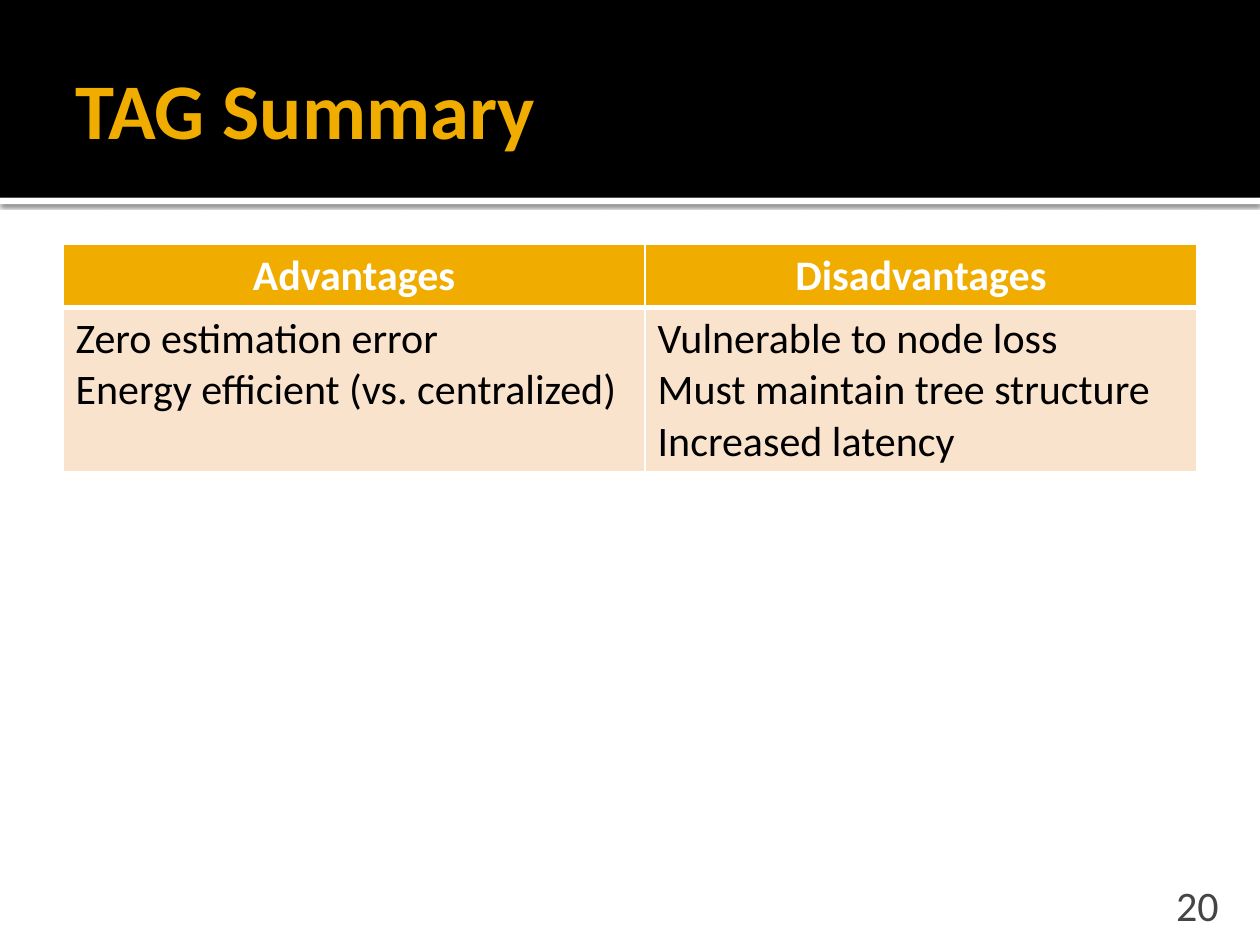
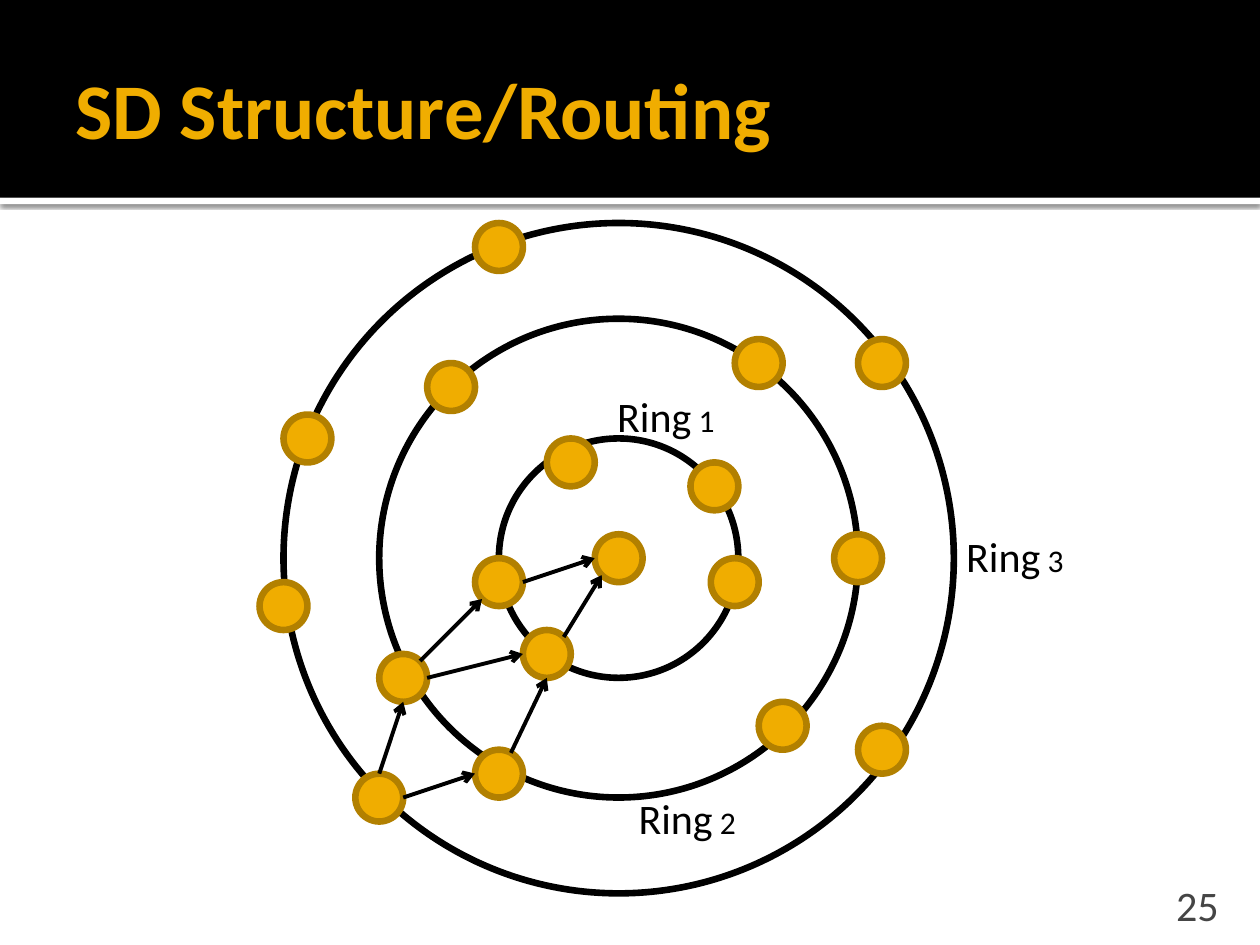
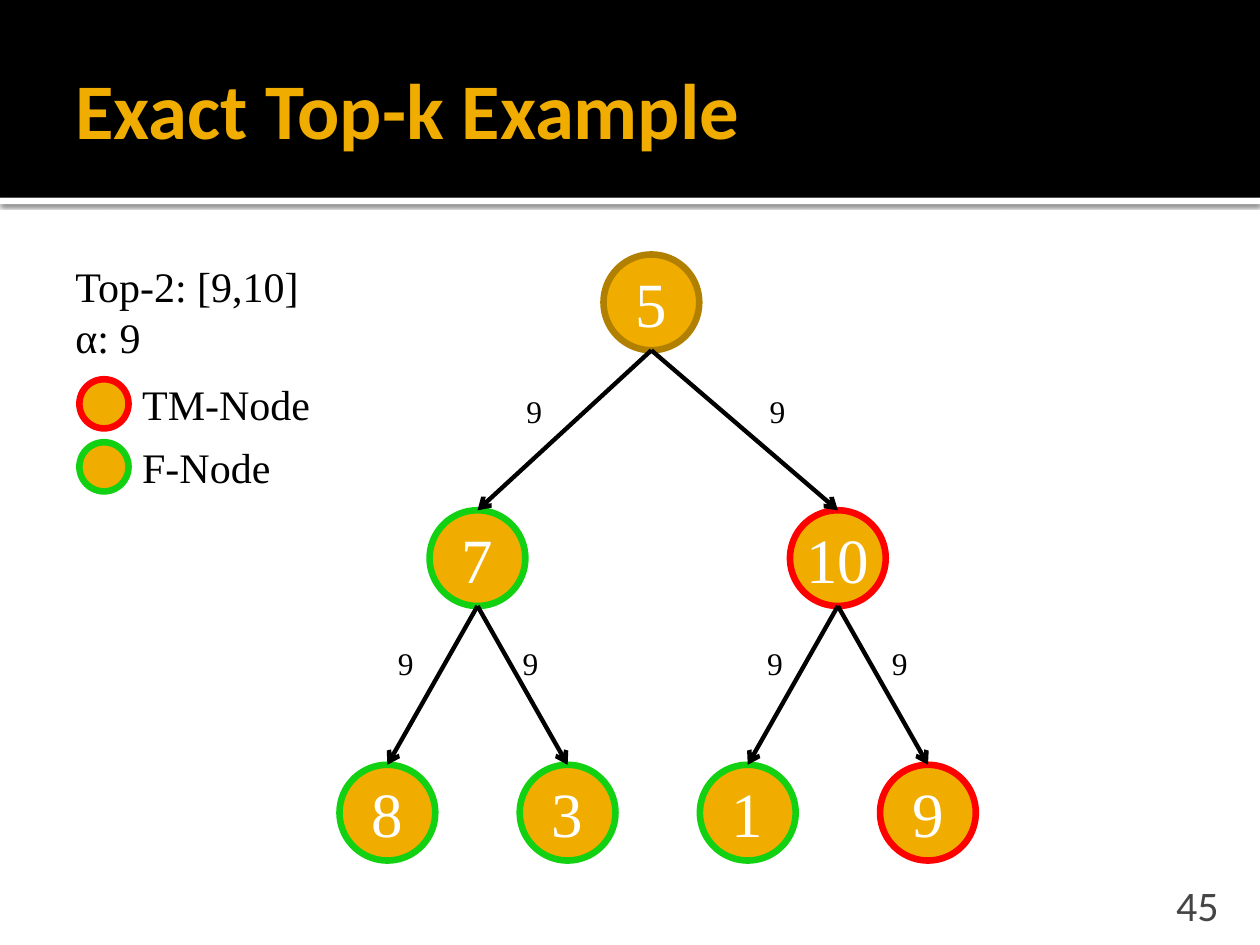
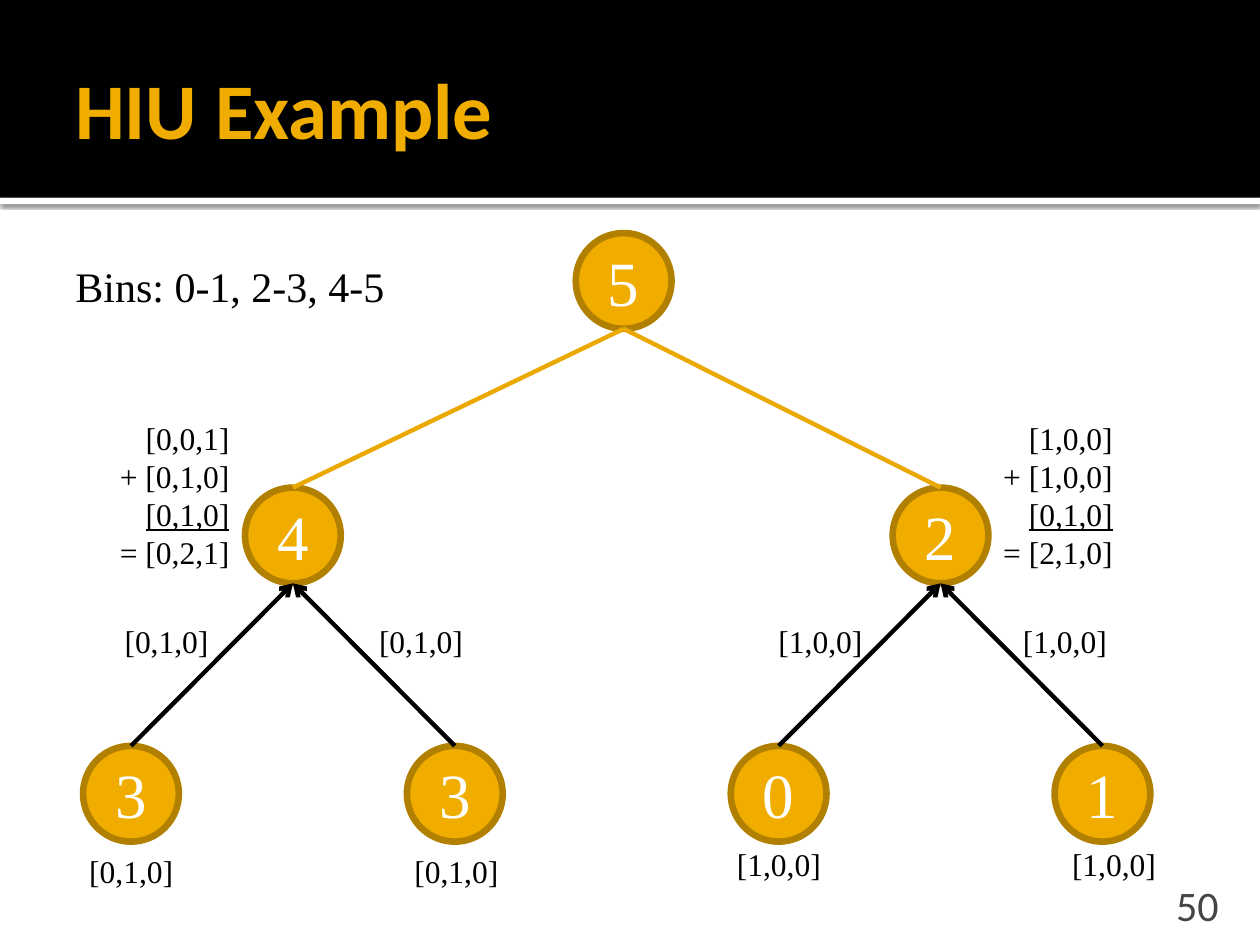
import math

import lxml.etree
import pptx
import pptx.dml.color
import pptx.enum.shapes
import pptx.enum.text
import pptx.oxml.ns
import pptx.util

COLORS = {
    "gold": "F0AD00", "dark gold": "B28000", "edge gold": "EBA900",
    "peach": "F9E3CC", "black": "000000", "white": "FFFFFF",
    "gray": "454545", "green": "12D012", "red": "FF0000",
}
SANS, SERIF = "Calibri", "Times New Roman"
RGB = {name: pptx.dml.color.RGBColor.from_string(c) for name, c in COLORS.items()}
qn = pptx.oxml.ns.qn
ALIGN = pptx.enum.text.PP_ALIGN
ANCHOR = pptx.enum.text.MSO_ANCHOR
SHAPE = pptx.enum.shapes.MSO_SHAPE

prs = pptx.Presentation()
prs.slide_width, prs.slide_height = pptx.util.Inches(10), pptx.util.Inches(7.5)
CELL = prs.slide_width / 100  # the slide is a grid of 100 columns and 75 rows


def put(s, at, text="", size=24, font=SERIF, color="black", bold=False,
        align=ALIGN.LEFT, anchor=ANCHOR.TOP, kind=None, fill=None, line=None):
    """Add a text box, or a preset shape if kind is given, at grid cells."""
    box = [round(v * CELL) for v in at]
    if kind is None:
        sp = s.shapes.add_textbox(*box)
    else:
        sp = s.shapes.add_shape(kind, *box)
        sp.shadow.inherit = False
        if fill:
            sp.fill.solid()
            sp.fill.fore_color.rgb = RGB[fill]
        else:
            sp.fill.background()
        if line:
            sp.line.color.rgb = RGB[line]
            sp.line.width = pptx.util.Pt(3.78)
        else:
            sp.line.fill.background()
    if text:
        tf = sp.text_frame
        tf.text = text
        tf.word_wrap = False
        tf.vertical_anchor = anchor
        for p in tf.paragraphs:
            p.alignment = align
            for r in p.runs:
                r.font.size, r.font.name, r.font.bold = pptx.util.Pt(size), font, bold
                r.font.color.rgb = RGB[color]
    return sp


def connect(s, start, end, color="black", width=2.5, arrow=True):
    """Draw a straight line between two grid points."""
    ends = [round(v * CELL) for v in (*start, *end)]
    cn = s.shapes.add_connector(pptx.enum.shapes.MSO_CONNECTOR.STRAIGHT, *ends)
    cn.line.color.rgb = RGB[color]
    cn.line.width = pptx.util.Pt(width)
    if arrow:
        lxml.etree.SubElement(cn.line._get_or_add_ln(), qn("a:tailEnd"), type="arrow")
    lxml.etree.SubElement(cn._element.spPr, qn("a:effectLst"))


# Shared frame: shadowed strip, black band, title, page number
slides = []
for title, number in (("TAG Summary", 20), ("SD Structure/Routing", 25),
                      ("Exact Top-k Example", 45), ("HIU Example", 50)):
    s = prs.slides.add_slide(prs.slide_layouts[6])
    strip = put(s, (0, 15.7, 100, 0.5), kind=SHAPE.RECTANGLE, fill="white")
    shadow = lxml.etree.SubElement(
        strip._element.spPr.find(qn("a:effectLst")), qn("a:outerShdw"),
        blurRad=str(pptx.util.Pt(2.5)), dist=str(pptx.util.Pt(0.8)),
        dir="5400000", algn="t", rotWithShape="0")
    tint = lxml.etree.SubElement(shadow, qn("a:srgbClr"), val=COLORS["black"])
    lxml.etree.SubElement(tint, qn("a:alpha"), val="60000")
    put(s, (0, 0, 100, 15.7), kind=SHAPE.RECTANGLE, fill="black")
    sp = put(s, (5, 1.7, 90, 13.7), title, 45, SANS, "gold", True, anchor=ANCHOR.MIDDLE)
    sp.text_frame.word_wrap = True
    sp = put(s, (89.7, 70.8, 8, 3), str(number), 24, SANS, "gray",
             align=ALIGN.RIGHT, anchor=ANCHOR.BOTTOM)
    sp.text_frame.word_wrap = True
    sp.text_frame.margin_bottom = 0
    slides.append(s)

# Slide 1: table of advantages and disadvantages
rows = [
    ("Advantages", "Disadvantages"),
    ("Zero estimation error\nEnergy efficient (vs. centralized)",
     "Vulnerable to node loss\nMust maintain tree structure\nIncreased latency"),
]
box = [round(v * CELL) for v in (5, 19.4, 90, 18)]
table = slides[0].shapes.add_table(2, 2, *box).table
for c, width in enumerate((46.2, 43.8)):
    table.columns[c].width = round(width * CELL)
for i, height in enumerate((5, 13)):
    table.rows[i].height = round(height * CELL)
    for c, text in enumerate(rows[i]):
        cell = table.cell(i, c)
        cell.text = text
        for p in cell.text_frame.paragraphs:
            p.alignment = ALIGN.LEFT if i else ALIGN.CENTER
            for r in p.runs:
                r.font.size, r.font.name, r.font.bold = pptx.util.Pt(24), SANS, i == 0
                r.font.color.rgb = RGB["black" if i else "white"]
        tcPr = cell._tc.get_or_add_tcPr()
        for side in ("lnL", "lnR", "lnT", "lnB"):
            thick = (side, i) in (("lnB", 0), ("lnT", 1))
            ln = lxml.etree.SubElement(tcPr, qn("a:" + side),
                                       w=str(pptx.util.Pt(3 if thick else 1)))
            paint = lxml.etree.SubElement(ln, qn("a:solidFill"))
            lxml.etree.SubElement(paint, qn("a:srgbClr"), val=COLORS["white"])
        cell.fill.solid()
        cell.fill.fore_color.rgb = RGB["peach" if i else "gold"]

# Slide 2: rings of nodes, measured in node radii from the centre
s = slides[1]
CX, CY, RADIUS = 49.1, 44.3, 1.9
for ring in (5, 10, 14):
    reach = ring * RADIUS
    put(s, (CX - reach, CY - reach, 2 * reach, 2 * reach), kind=SHAPE.OVAL, line="black")

sink, inner_w, inner_sw = (0, 0), (-5, 1), (-3, 4)
middle_w, middle_sw, source = (-9, 5), (-5, 9), (-10, 10)
nodes = [
    sink, inner_w, inner_sw, (-2, -4), (4, -3), (4.85, 1),
    middle_w, middle_sw, (-7, -7.15), (5.85, -8.15), (10, 0), (6.85, 7),
    source, (-13, -5), (-5, -13), (-14, 2), (11, -8.15), (11, 8),
]
for x, y in nodes:
    put(s, (CX + (x - 1) * RADIUS, CY + (y - 1) * RADIUS, 2 * RADIUS, 2 * RADIUS),
        kind=SHAPE.OVAL, fill="gold", line="dark gold")

# Each route leaves and enters a node's edge at an angle, clockwise from the right
routes = [
    (inner_sw, -45, sink, 135), (inner_w, 0, sink, 180),
    (middle_w, -45, inner_w, 135), (middle_w, 0, inner_sw, 180),
    (middle_sw, -60, inner_sw, 90), (source, -90, middle_w, 90),
    (source, 0, middle_sw, 180),
]
for a, leave, b, enter in routes:
    start, end = [(CX + RADIUS * (x + math.cos(math.radians(angle))),
                   CY + RADIUS * (y + math.sin(math.radians(angle))))
                  for (x, y), angle in ((a, leave), (b, enter))]
    connect(s, start, end, width=2.25)

for ring, x, y in ((1, 48, 30.5), (2, 49.7, 62.4), (3, 75.7, 41.6)):
    sp = put(s, (x, y, 10, 5), "Ring", font=SANS)
    r = sp.text_frame.paragraphs[0].add_run()
    r.text = f" {ring}"
    r.font.size, r.font.name = pptx.util.Pt(18), SANS
    r.font.color.rgb = RGB["black"]

# Slides 3 and 4: binary trees; node values and outlines run root, middle, leaves
NODE = 7.6
trees = [
    dict(s=slides[2], root=51.7, leaf=30.75, step=14.3, tops=(20.2, 40.5, 60.7),
         values=(5, 7, 10, 8, 3, 1, 9), down=True,
         lines=("dark gold", "green", "red", "green", "green", "green", "red")),
    dict(s=slides[3], root=49.5, leaf=10.4, step=25.7, tops=(18.5, 38.7, 59.2),
         values=(5, 4, 2, 3, 3, 0, 1), down=False, lines=("dark gold",) * 7),
]
for tree in trees:
    s, down = tree["s"], tree["down"]
    leaves = [tree["leaf"] + i * tree["step"] for i in range(4)]
    middles = [sum(leaves[:2]) / 2, sum(leaves[2:]) / 2]
    centers = [tree["root"], *middles, *leaves]
    tops = [tree["tops"][(i + 1).bit_length() - 1] for i in range(7)]
    for i, x in enumerate(centers):
        put(s, (x - NODE / 2, tops[i], NODE, NODE), str(tree["values"][i]), 36,
            color="white", align=ALIGN.CENTER, anchor=ANCHOR.MIDDLE,
            kind=SHAPE.OVAL, fill="gold", line=tree["lines"][i])
    for i in range(1, 7):
        parent = (i - 1) // 2
        ends = [(centers[parent], tops[parent] + NODE), (centers[i], tops[i])]
        if down:
            connect(s, *ends)
        elif parent == 0:
            connect(s, *ends, color="edge gold", arrow=False)
        else:
            connect(s, *reversed(ends))

# Slide 3: thresholds on the edges, and the key
s = slides[2]
for x, y in ((40.8, 30.6), (60.1, 30.6), (30.6, 50.6), (40.5, 50.6),
             (59.9, 50.6), (69.8, 50.6)):
    put(s, (x, y, 3.3, 4), "9", 18)
put(s, (5, 20.2, 19.9, 9.1), "Top-2: [9,10]\nα: 9")
for i, (name, line, width) in enumerate((("TM-Node", "red", 15.4),
                                         ("F-Node", "green", 12.3))):
    y = 30.1 + 5 * i
    put(s, (6.3, y, 3.9, 3.9), kind=SHAPE.OVAL, fill="gold", line=line)
    put(s, (10.3, y - 0.55, width, 5), name)

# Slide 4: histograms on edges, under leaves, and summed beside the middle nodes
s = slides[3]
put(s, (5, 20.2, 26.8, 5), "Bins: 0-1, 2-3, 4-5")
for text, x, y in (
        ("[0,1,0]", 8.9, 48.9), ("[0,1,0]", 29.1, 48.9),
        ("[1,0,0]", 60.8, 48.9), ("[1,0,0]", 80.2, 48.9),
        ("[0,1,0]", 6.1, 67.1), ("[0,1,0]", 31.9, 67.1),
        ("[1,0,0]", 57.5, 66.6), ("[1,0,0]", 84.1, 66.6)):
    put(s, (x, y, 8.8, 4), text, 18)
for text, x in (("[0,0,1]\n+ [0,1,0]\n[0,1,0]\n= [0,2,1]", 8.3),
                ("[1,0,0]\n+ [1,0,0]\n[0,1,0]\n= [2,1,0]", 78.4)):
    sp = put(s, (x, 32.8, 10.9, 13.1), text, 18, align=ALIGN.RIGHT)
    sp.text_frame.paragraphs[2].runs[0].font.underline = True

prs.save("out.pptx")
